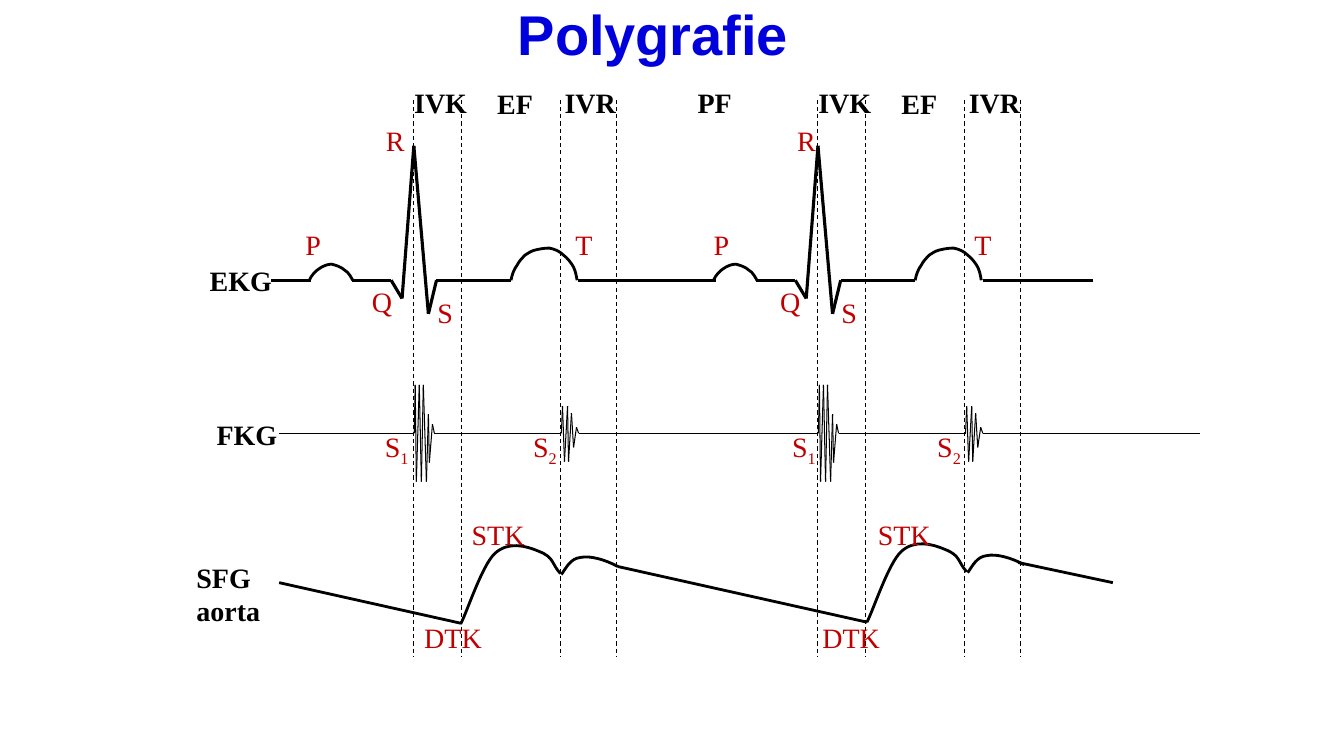
from itertools import pairwise

from lxml.etree import SubElement
from pptx import Presentation
from pptx.dml.color import RGBColor
from pptx.enum.dml import MSO_LINE
from pptx.enum.shapes import MSO_CONNECTOR
from pptx.enum.text import MSO_AUTO_SIZE, PP_ALIGN
from pptx.oxml.ns import qn
from pptx.util import Pt

BLACK = RGBColor(0, 0, 0)
RED = RGBColor(0xC0, 0, 0)
BLUE = RGBColor(0, 0, 0xDC)
SERIF = "Times New Roman"

R_WAVE_X = 295.2  # first R wave; every region measures x from here
BEAT = 288.7  # distance between the two heart beats
BEATS = (0, BEAT)

# Bezier control points: a start, then three points per segment
P_WAVE = [(-74.2, 0), (-72.7, -3.6), (-69.8, -6.5), (-67.7, -7.9),
          (-64.8, -10.1), (-61.2, -11.5), (-58.3, -11.5),
          (-55.4, -10.8), (-51.1, -9.4), (-49, -7.2),
          (-46.1, -5.8), (-44, -1.4), (-43.2, 0)]
T_WAVE = [(69.8, 0), (70.6, -4.3), (72, -7.9), (74.2, -10.8),
          (75.6, -13.7), (77.8, -15.8), (79.9, -18),
          (82.1, -19.4), (84.2, -20.9), (87.1, -21.6),
          (90, -22.3), (93.6, -23), (97.2, -23),
          (100.8, -22.3), (104.4, -20.9), (107.3, -18),
          (110.2, -15.8), (113, -12.2), (114.5, -9.4),
          (115.9, -6.5), (116.6, -2.9), (117, 0)]
SYSTOLIC_WAVE = [(105.1, -36), (98.6, -43.2), (100.8, -47.5), (90, -51.8),
                 (79.9, -56.2), (67.7, -59), (58.3, -50.4),
                 (49, -41.8), (38.2, -7.9), (33.8, 0)]
DICROTIC_WAVE = [(105.8, -35.3), (109.4, -40.3), (112.3, -46.8), (119.5, -47.5),
                 (126, -49), (136.8, -46.1), (146.2, -41)]
QRS = [(-44, 0), (-15.8, 0), (-8, 13), (0.4, -96), (10.8, 24), (16.6, 0), (69.8, 0)]
HEART_SOUNDS = [(0.7, 0), (1.4, -34.5), (2.2, 34.5), (4.3, -34.5), (5.8, 34.5),
                (7.2, -34.5), (9.4, 34.5), (10.8, -13.7), (11.5, 20.9),
                (13.7, -6.5), (15.1, 0),
                (105.8, 0), (106.6, -19.4), (108, 20.2), (110.2, -19.4),
                (110.9, 20.2), (113, -14.4), (114.5, 10.1), (116.6, -4.3), (118.1, 0)]


def shifted(points, left, top):
    return [(left + x, top + y) for x, y in points]


def add_text(slide, lines, left, top, width, color=BLACK, bold=False,
             align=PP_ALIGN.LEFT, subscript=""):
    box = slide.shapes.add_textbox(Pt(left), Pt(top), Pt(width), Pt(7.6 + 24 * len(lines)))
    frame = box.text_frame
    frame.word_wrap = True
    frame.auto_size = MSO_AUTO_SIZE.SHAPE_TO_FIT_TEXT
    for index, line in enumerate(lines):
        paragraph = frame.add_paragraph() if index else frame.paragraphs[0]
        paragraph.alignment = align
        paragraph.add_run().text = line
        if subscript:
            run = paragraph.add_run()
            run.text = subscript
            run._r.get_or_add_rPr().set("baseline", "-25000")
        font = paragraph.font
        font.name, font.size, font.bold = SERIF, Pt(20), bold
        font.color.rgb = color


def add_wave_labels(slide, labels, left, top):
    """Place each label once per beat, at its own two x offsets."""
    for text, subscript, offsets, drop, width in labels:
        for offset in offsets:
            add_text(slide, [text], left + offset, top + drop, width, RED,
                     subscript=subscript)


def add_lines(slide, points, width, dash=None):
    """Join successive points with straight connectors."""
    for start, end in pairwise(points):
        line = slide.shapes.add_connector(
            MSO_CONNECTOR.STRAIGHT, *(Pt(value) for value in start + end))
        line.line.color.rgb = BLACK
        line.line.width = Pt(width)
        if dash:
            line.line.dash_style = dash
        SubElement(line._element.spPr, qn("a:effectLst"))


def add_curve(slide, controls, width):
    """Draw a chain of cubic Bezier segments."""
    points = [(Pt(x), Pt(y)) for x, y in controls]
    segments = [points[first:first + 4] for first in range(0, len(points) - 1, 3)]
    builder = slide.shapes.build_freeform(*points[0])
    for start, control_1, control_2, end in segments:
        middle = [(a + 3 * b + 3 * c + d) // 8
                  for a, b, c, d in zip(start, control_1, control_2, end)]
        builder.add_line_segments([middle, end], close=False)
    curve = builder.convert_to_shape()
    outline = curve._element.spPr.find(".//" + qn("a:path"))
    for straight in outline.findall(qn("a:lnTo")):
        outline.remove(straight)
    for segment in segments:
        bezier = SubElement(outline, qn("a:cubicBezTo"))
        for x, y in segment[1:]:
            SubElement(bezier, qn("a:pt"), x=str(x - curve.left), y=str(y - curve.top))
    curve.fill.background()
    curve.line.color.rgb = BLACK
    curve.line.width = Pt(width)
    curve.shadow.inherit = False


def add_title(slide, left, top, width, height):
    box = slide.shapes.add_textbox(Pt(left), Pt(top), Pt(width), Pt(height))
    frame = box.text_frame
    frame.word_wrap = True
    frame.margin_left = frame.margin_right = frame.margin_top = frame.margin_bottom = 0
    paragraph = frame.paragraphs[0]
    paragraph.text = "Polygrafie"
    paragraph.alignment = PP_ALIGN.CENTER
    paragraph.line_spacing = Pt(40)
    font = paragraph.font
    font.name, font.size, font.bold = "Arial", Pt(40), True
    font.color.rgb = BLUE


def add_phases(slide, left, top, height):
    for beat in BEATS:
        for boundary in (0, 34.2, 105.4, 145.2):
            x = left + beat + boundary
            add_lines(slide, [(x, top), (x, top + height)], 0.75, MSO_LINE.DASH)
        for name, offset, drop, align in (("IVK", -6.5, -13.7, PP_ALIGN.LEFT),
                                          ("EF", 43.2, -13, PP_ALIGN.CENTER),
                                          ("IVR", 101, -13.7, PP_ALIGN.LEFT)):
            add_text(slide, [name], left + beat + offset, top + drop, 59, bold=True,
                     align=align)
    add_text(slide, ["PF"], left + 185.8, top - 13.7, 59, bold=True,
             align=PP_ALIGN.CENTER)


def add_ekg(slide, left, baseline):
    for beat in BEATS:
        x = left + beat
        add_lines(slide, [(x - 101.5, baseline), (x - 72.7, baseline)], 2.25)
        add_curve(slide, shifted(P_WAVE, x, baseline), 2)
        add_lines(slide, shifted(QRS, x, baseline), 2.25)
        add_curve(slide, shifted(T_WAVE, x, baseline), 2)
        add_lines(slide, [(x + 118, baseline), (x + 196.6, baseline)], 2.25)
    add_text(slide, ["EKG"], left - 152.6, baseline - 15.5, 59, bold=True)
    add_wave_labels(slide, [("P", "", (-84.2, 207.4), -41.6, 26),
                            ("Q", "", (-36.7, 254.9), -0.9, 47),
                            ("R", "", (-26.6, 267.1), -115.6, 26),
                            ("S", "", (10.1, 298.8), 7.2, 30),
                            ("T", "", (108.7, 393.8), -41.6, 26)], left, baseline)


def add_fkg(slide, left, baseline):
    trace = [(left - 95.8, baseline)]
    for beat in BEATS:
        trace += shifted(HEART_SOUNDS, left + beat, baseline)
    add_lines(slide, trace + [(left + 562.3, baseline)], 0.75)
    add_text(slide, ["FKG"], left - 147.6, baseline - 15.1, 59, bold=True)
    add_wave_labels(slide, [("S", "1", (-27.4, 263.5), -6.5, 47.5),
                            ("S", "2", (78.5, 367.2), -6.5, 47.5)], left, baseline)


def add_sfg(slide, left, baseline):
    for beat, rise in ((0, 0), (290.2, -1.3)):
        for wave in (DICROTIC_WAVE, SYSTOLIC_WAVE):
            add_curve(slide, shifted(wave, left + beat, baseline + rise), 2)
    for decline in ([(146.2, -41), (324, -1.3)],
                    [(-95.8, -29.5), (34, -0.5)],
                    [(432, -43.9), (499.7, -29.5)]):
        add_lines(slide, shifted(decline, left, baseline), 2)
    add_text(slide, ["SFG", "aorta"], left - 162, baseline - 49.2, 74, bold=True)
    add_wave_labels(slide, [("STK", "", (34.6, 324.7), -79.8, 78.5),
                            ("DTK", "", (0.7, 285.1), -6.1, 78.5)], left, baseline)


def main():
    presentation = Presentation()
    presentation.slide_width, presentation.slide_height = Pt(960), Pt(540)
    slide = presentation.slides.add_slide(presentation.slide_layouts[6])
    add_title(slide, 43.2, 8, 846.4, 35.3)
    add_phases(slide, R_WAVE_X, 71.3, 397.4)
    add_ekg(slide, R_WAVE_X, 200.2)
    add_fkg(slide, R_WAVE_X, 309.5)
    add_sfg(slide, R_WAVE_X, 445.7)
    presentation.save("out.pptx")


if __name__ == "__main__":
    main()
